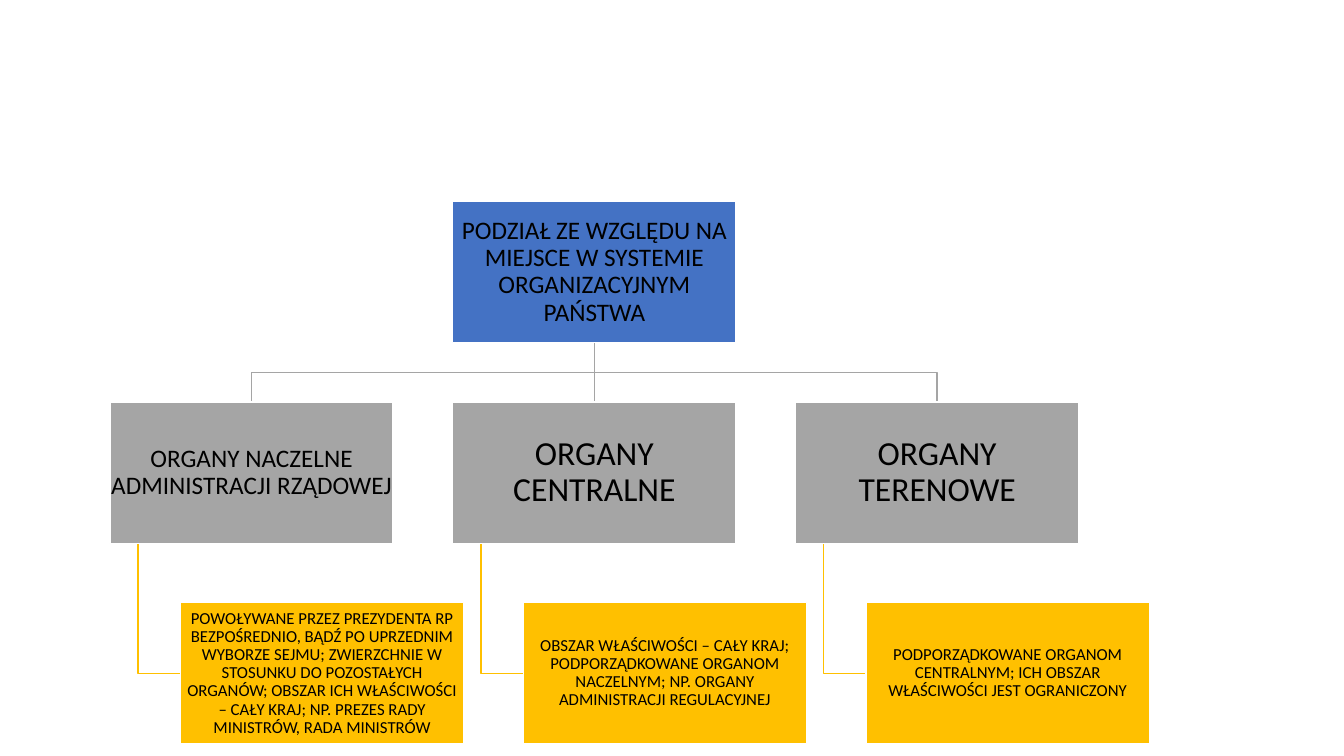
from lxml import etree
from pptx import Presentation
from pptx import util as u
from pptx.dml.color import RGBColor
from pptx.enum import shapes, text
from pptx.oxml import ns

COLORS = {
    "root": "4472C4",
    "branch": "A5A5A5",
    "detail": "FFC000",
    "outline": "FFFFFF",
    "text": "000000",
}
FONT = "Calibri"
BOX_WIDTH, BOX_HEIGHT = 2.81, 1.4
COLUMN_STEP = 3.4
LEVEL_STEP = 1.99
DETAIL_INDENT = 0.7
STEM_INDENT = 0.28

ROOT = "PODZIAŁ ZE WZGLĘDU NA MIEJSCE W SYSTEMIE ORGANIZACYJNYM PAŃSTWA"
BRANCHES = [
    ("ORGANY NACZELNE ADMINISTRACJI RZĄDOWEJ", 18,
     "POWOŁYWANE PRZEZ PREZYDENTA RP BEZPOŚREDNIO, BĄDŹ PO UPRZEDNIM "
     "WYBORZE SEJMU; ZWIERZCHNIE W STOSUNKU DO POZOSTAŁYCH ORGANÓW; "
     "OBSZAR ICH WŁAŚCIWOŚCI – CAŁY KRAJ; NP. PREZES RADY MINISTRÓW, "
     "RADA MINISTRÓW"),
    ("ORGANY CENTRALNE", 24,
     "OBSZAR WŁAŚCIWOŚCI – CAŁY KRAJ; PODPORZĄDKOWANE ORGANOM NACZELNYM; "
     "NP. ORGANY ADMINISTRACJI REGULACYJNEJ"),
    ("ORGANY TERENOWE", 24,
     "PODPORZĄDKOWANE ORGANOM CENTRALNYM; ICH OBSZAR WŁAŚCIWOŚCI "
     "JEST OGRANICZONY"),
]


def color(name):
    return RGBColor.from_string(COLORS[name])


def write_text(shape, words, size, margin=0.01):
    frame = shape.text_frame
    frame.word_wrap = True
    frame.vertical_anchor = text.MSO_ANCHOR.MIDDLE
    frame.margin_left = frame.margin_right = u.Inches(margin)
    frame.margin_top = frame.margin_bottom = u.Inches(margin)
    paragraph = frame.paragraphs[0]
    paragraph.alignment = text.PP_ALIGN.CENTER
    paragraph.line_spacing = 0.9
    run = paragraph.add_run()
    run.text = words
    run.font.name = FONT
    run.font.size = u.Pt(size)
    run.font.color.rgb = color("text")


def add_box(slide, left, top, words, size, fill):
    box = slide.shapes.add_shape(
        shapes.MSO_SHAPE.RECTANGLE, u.Inches(left), u.Inches(top),
        u.Inches(BOX_WIDTH), u.Inches(BOX_HEIGHT))
    box.shadow.inherit = False
    box.fill.solid()
    box.fill.fore_color.rgb = color(fill)
    box.line.color.rgb = color("outline")
    box.line.width = u.Pt(1)
    write_text(box, words, size, margin=0.02 if size > 18 else 0.01)


def add_link(slide, points, line_color):
    points = [(u.Inches(x), u.Inches(y)) for x, y in points]
    if len(points) == 2:
        link = slide.shapes.add_connector(
            shapes.MSO_CONNECTOR.STRAIGHT, *points[0], *points[1])
        etree.SubElement(link._element.spPr, ns.qn("a:effectLst"))
    else:
        builder = slide.shapes.build_freeform(*points[0])
        builder.add_line_segments(points[1:], close=False)
        link = builder.convert_to_shape()
        link.shadow.inherit = False
        link.fill.background()
    link.line.color.rgb = color(line_color)
    link.line.width = u.Pt(1)


def add_branch(slide, left, top, root_center, title, size, detail):
    """Place one column: its links, its heading and the detail below."""
    # Link from the root
    center = left + BOX_WIDTH / 2
    root_bottom = top - LEVEL_STEP + BOX_HEIGHT
    middle = (root_bottom + top) / 2
    points = [(root_center, root_bottom), (center, top)]
    if abs(center - root_center) > 0.01:
        points[1:1] = [(root_center, middle), (center, middle)]
    add_link(slide, points, "branch")

    # Link to the detail
    detail_left, detail_top = left + DETAIL_INDENT, top + LEVEL_STEP
    stem = left + STEM_INDENT
    elbow = detail_top + BOX_HEIGHT / 2
    add_link(slide, [(stem, top + BOX_HEIGHT), (stem, elbow),
                     (detail_left, elbow)], "detail")

    # Boxes
    add_box(slide, left, top, title, size, "branch")
    add_box(slide, detail_left, detail_top, detail, 12, "detail")


def add_hierarchy(slide, left, top):
    root_left = left + COLUMN_STEP
    for column, branch in enumerate(BRANCHES):
        add_branch(slide, left + column * COLUMN_STEP, top + LEVEL_STEP,
                   root_left + BOX_WIDTH / 2, *branch)
    add_box(slide, root_left, top, ROOT, 18, "root")


def main():
    presentation = Presentation()
    presentation.slide_width = u.Inches(13.33)
    presentation.slide_height = u.Inches(7.5)
    slide = presentation.slides.add_slide(presentation.slide_layouts[6])
    add_hierarchy(slide, left=1.09, top=2)
    presentation.save("out.pptx")


if __name__ == "__main__":
    main()
